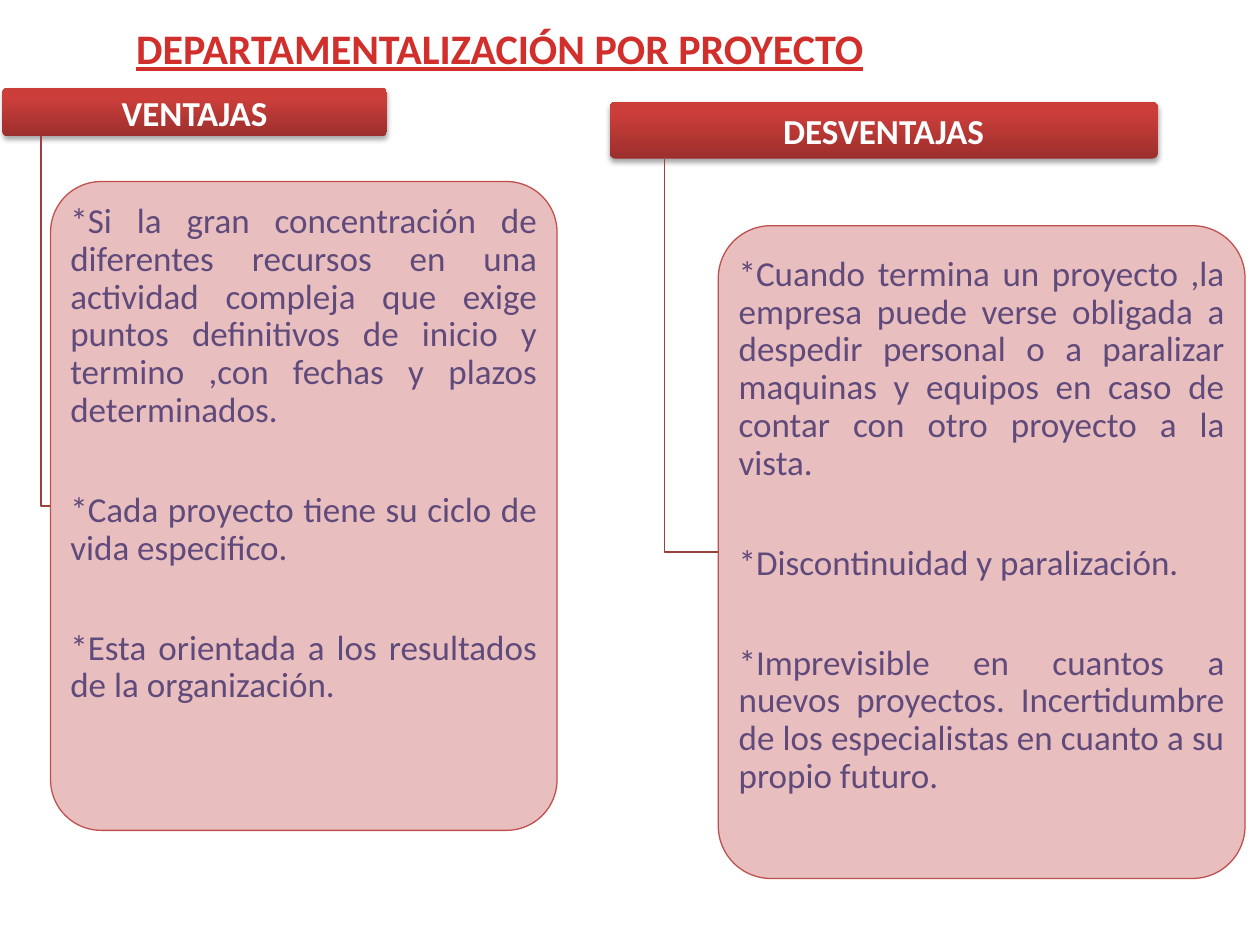
from lxml import etree
from pptx import Presentation
from pptx import util as u
from pptx.dml.color import RGBColor
from pptx.enum import shapes, text
from pptx.oxml import ns

HUES = {"title": "D02F2C", "dark": "9C2F2D", "red": "CB3E3A", "pink": "E6B9B8",
        "edge": "C0504D", "line": "9A403E", "body": "604A7B", "white": "FFFFFF",
        "shade": "000000"}


class Deck:
    """Holds the style and the current slide, and draws each kind of element."""

    def __init__(self):
        self.prs = Presentation()
        self.prs.slide_width, self.prs.slide_height = u.Cm(25.4), u.Cm(19.05)
        self.slide = self.prs.slides.add_slide(self.prs.slide_layouts[5])

    def hue(self, name):
        return RGBColor.from_string(HUES[name])

    def style(self, frame, size, hue, align, bold=False, line=False):
        for par in frame.paragraphs:
            par.alignment = align
            for run in par.runs:
                font = run.font
                font.name, font.size, font.bold = "Calibri", u.Pt(size), bold
                font.underline = line
                font.color.rgb = self.hue(hue)

    def title(self, words, box):
        shape = self.slide.shapes.title
        shape.left, shape.top, shape.width, shape.height = map(u.Cm, box)
        frame = shape.text_frame
        frame.text = words
        frame.vertical_anchor = text.MSO_ANCHOR.TOP
        frame.auto_size = text.MSO_AUTO_SIZE.NONE
        self.style(frame, 24, "title", text.PP_ALIGN.LEFT, True, True)

    def panel(self, box):
        shape = self.slide.shapes.add_shape(
            shapes.MSO_SHAPE.ROUNDED_RECTANGLE, *map(u.Cm, box))
        shape.adjustments[0] = 0.1
        shape.shadow.inherit = False
        frame = shape.text_frame
        frame.word_wrap = True
        frame.margin_left = frame.margin_right = u.Cm(0.1)
        frame.margin_top = frame.margin_bottom = u.Cm(0.07)
        return shape

    def head(self, words, box):
        shape = self.panel(box)
        shape.line.fill.background()
        shape.fill.gradient()
        shape.fill.gradient_angle = 90
        stops = zip(shape.fill.gradient_stops, ("dark", "red"), (0, 0.8))
        for stop, name, place in stops:
            stop.color.rgb, stop.position = self.hue(name), place
        glow = etree.SubElement(
            shape._element.spPr.find(ns.qn("a:effectLst")), ns.qn("a:outerShdw"),
            blurRad=str(u.Pt(3.1)), dist=str(u.Pt(1.8)), dir="5400000", rotWithShape="0")
        tint = etree.SubElement(glow, ns.qn("a:srgbClr"), val=HUES["shade"])
        etree.SubElement(tint, ns.qn("a:alpha"), val="35000")
        shape.text_frame.text = words
        shape.text_frame.vertical_anchor = text.MSO_ANCHOR.MIDDLE
        self.style(shape.text_frame, 20, "white", text.PP_ALIGN.CENTER, True)

    def body(self, points, box, inset):
        shape = self.panel(box)
        shape.fill.solid()
        shape.fill.fore_color.rgb = self.hue("pink")
        tint = shape._element.spPr.find(ns.qn("a:solidFill"))[0]
        etree.SubElement(tint, ns.qn("a:alpha"), val="90000")
        shape.line.color.rgb, shape.line.width = self.hue("edge"), u.Pt(0.75)
        frame = shape.text_frame
        frame.text = "\n".join(points)
        frame.vertical_anchor = text.MSO_ANCHOR.TOP
        frame.margin_top = u.Cm(inset)
        for par in frame.paragraphs:
            par.line_spacing = 0.9
        for par in frame.paragraphs[1:]:
            par.space_before = u.Pt(35.5)
        self.style(frame, 20, "body", text.PP_ALIGN.JUSTIFY)

    def elbow(self, head, box):
        x, top = u.Cm(head[0] + head[2] / 10), u.Cm(head[1] + head[3])
        mid = u.Cm(box[1] + box[3] / 2)
        pen = self.slide.shapes.build_freeform(x, top)
        pen.add_line_segments([(x, mid), (u.Cm(box[0]), mid)], close=False)
        shape = pen.convert_to_shape()
        shape.shadow.inherit = False
        shape.fill.background()
        shape.line.color.rgb, shape.line.width = self.hue("line"), u.Pt(0.75)

    def column(self, words, head, points, box, inset):
        self.head(words, head)
        self.elbow(head, box)
        self.body(points, box, inset)


def main():
    deck = Deck()
    deck.column(
        "VENTAJAS", (0.05, 1.78, 7.75, 0.97),
        ["*Si la gran concentración de diferentes recursos en una actividad compleja "
         "que exige puntos definitivos de inicio y termino ,con fechas y plazos "
         "determinados.",
         "*Cada proyecto tiene su ciclo de vida especifico.",
         "*Esta orientada a los resultados de la organización."],
        (1.02, 3.66, 10.21, 13.08), 0.14)
    deck.column(
        "DESVENTAJAS", (12.29, 2.06, 11.05, 1.14),
        ["*Cuando termina un proyecto ,la empresa puede verse obligada a despedir "
         "personal o a paralizar maquinas y equipos en caso de contar con otro "
         "proyecto a la vista.",
         "*Discontinuidad y paralización.",
         "*Imprevisible en cuantos a nuevos proyectos. Incertidumbre de los "
         "especialistas en cuanto a su propio futuro."],
        (14.48, 4.55, 10.62, 13.16), 0.3)
    deck.title("DEPARTAMENTALIZACIÓN POR PROYECTO", (2.49, 0.33, 19, 2.31))
    deck.prs.save("out.pptx")


if __name__ == "__main__":
    main()
